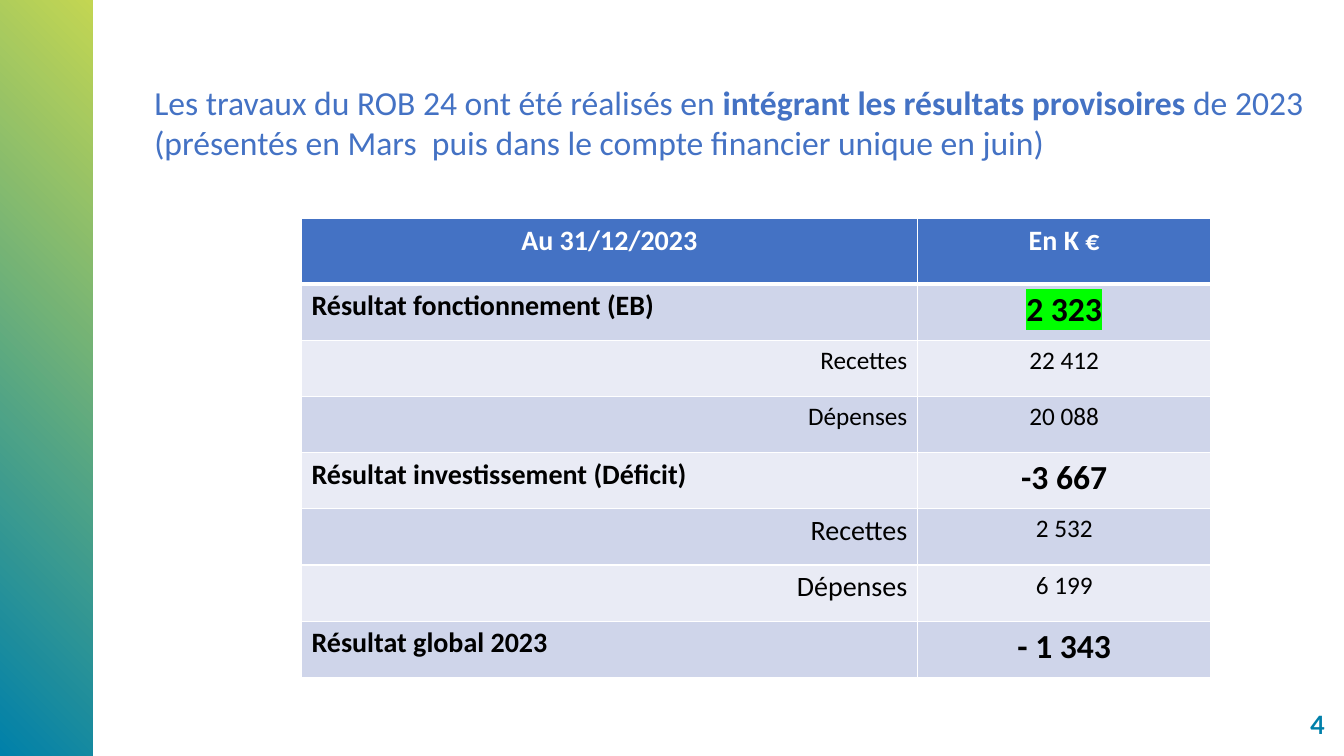
from dataclasses import dataclass

from lxml.etree import SubElement
from pptx import Presentation
from pptx.dml.color import RGBColor
from pptx.enum.shapes import MSO_SHAPE as Shape
from pptx.enum.text import MSO_ANCHOR as Anchor, MSO_AUTO_SIZE as AutoSize, PP_ALIGN as Align
from pptx.oxml.ns import qn
from pptx.util import Inches, Pt


@dataclass(frozen=True)
class Theme:
    blue: str = "4472C4"
    teal: str = "0080AA"
    lime: str = "C3D652"
    white: str = "FFFFFF"
    black: str = "000000"
    bands: tuple = ("CFD5EA", "E9EBF5")
    highlight: str = "00FF00"
    body_font: str = "Calibri"
    number_font: str = "Lato"
    large: int = 24
    medium: int = 20
    small: int = 18


THEME = Theme()
WIDTH, HEIGHT = Inches(13.33), Inches(7.5)
HEADINGS = ("Au 31/12/2023", "En K €")
# label, amount, is a result, label size, highlight of the amount
RESULTS = (
    ("Résultat fonctionnement (EB)", "2 323", True, THEME.medium, THEME.highlight),
    ("Recettes", "22 412", False, THEME.small, None),
    ("Dépenses", "20 088", False, THEME.small, None),
    ("Résultat investissement (Déficit)", "-3 667", True, THEME.medium, None),
    ("Recettes", "2 532", False, THEME.medium, None),
    ("Dépenses", "6 199", False, THEME.medium, None),
    ("Résultat global 2023", "- 1 343", True, THEME.medium, None),
)


def box(left, top, width, height):
    """Turn percentages of the slide's size into lengths."""
    return (int(WIDTH * left / 100), int(HEIGHT * top / 100),
            int(WIDTH * width / 100), int(HEIGHT * height / 100))


def rgb(color):
    return RGBColor.from_string(color)


def add_text(paragraph, text, size=THEME.large, color=THEME.black, bold=False,
             font=THEME.body_font, align=Align.LEFT, highlight=None):
    paragraph.alignment = align
    run = paragraph.add_run()
    run.text = text
    run.font.size = Pt(size)
    run.font.bold = bold
    run.font.name = font
    run.font.color.rgb = rgb(color)
    if highlight:
        properties = run.font._element
        mark = SubElement(properties, qn("a:highlight"))
        SubElement(mark, qn("a:srgbClr"), val=highlight)
        properties.find(qn("a:latin")).addprevious(mark)


def add_side_band(slide):
    band = slide.shapes.add_shape(Shape.RECTANGLE, *box(0, 0, 6.9, 100))
    band.shadow.inherit = False
    band.line.fill.background()
    band.fill.gradient()
    band.fill.gradient_angle = 45
    for stop, color in zip(band.fill.gradient_stops, (THEME.teal, THEME.lime)):
        stop.color.rgb = rgb(color)


def add_title(slide):
    title = slide.shapes.title
    title.left, title.top, title.width, title.height = box(10.73, 10.13, 87.55, 12.13)
    frame = title.text_frame
    frame.word_wrap = True
    frame.vertical_anchor = Anchor.TOP
    frame.auto_size = AutoSize.SHAPE_TO_FIT_TEXT
    for text, bold in (
        ("Les travaux du ROB 24 ont été réalisés en ", False),
        ("intégrant les résultats provisoires ", True),
        ("de 2023 (présentés en Mars  puis dans le compte financier unique en juin)", False),
    ):
        add_text(frame.paragraphs[0], text, color=THEME.blue, bold=bold)


def add_page_number(slide, number):
    frame = slide.shapes.add_textbox(*box(71.42, 93.07, 27.91, 5.47)).text_frame
    frame.word_wrap = True
    frame.vertical_anchor = Anchor.MIDDLE
    add_text(frame.paragraphs[0], number, size=THEME.small, color=THEME.teal,
             bold=True, font=THEME.number_font, align=Align.RIGHT)


def set_borders(cell, top=1, bottom=1):
    properties = cell._tc.get_or_add_tcPr()
    for index, (side, width) in enumerate((("L", 1), ("R", 1), ("T", top), ("B", bottom))):
        line = SubElement(properties, qn(f"a:ln{side}"), w=str(Pt(width)))
        fill = SubElement(line, qn("a:solidFill"))
        SubElement(fill, qn("a:srgbClr"), val=THEME.white)
        properties.insert(index, line)


def fill_cell(cell, text, fill, top=1, bottom=1, **text_format):
    cell.fill.solid()
    cell.fill.fore_color.rgb = rgb(fill)
    set_borders(cell, top, bottom)
    add_text(cell.text_frame.paragraphs[0], text, **text_format)


def add_results_table(slide):
    left, top, width, height = box(22.43, 28.93, 67.67, 60.67)
    table = slide.shapes.add_table(len(RESULTS) + 1, len(HEADINGS),
                                   left, top, width, height).table
    table.columns[0].width = Inches(6.11)
    table.columns[1].width = width - Inches(6.11)
    header_height = Inches(0.65)
    for index, row in enumerate(table.rows):
        row.height = (height - header_height) // len(RESULTS) if index else header_height

    for column, heading in enumerate(HEADINGS):
        fill_cell(table.cell(0, column), heading, THEME.blue, bottom=3, size=THEME.medium,
                  color=THEME.white, bold=True, align=Align.CENTER)
    for row, (label, amount, is_result, size, highlight) in enumerate(RESULTS, start=1):
        shared = dict(fill=THEME.bands[(row - 1) % 2], top=3 if row == 1 else 1, bold=is_result)
        fill_cell(table.cell(row, 0), label, size=size,
                  align=Align.LEFT if is_result else Align.RIGHT, **shared)
        fill_cell(table.cell(row, 1), amount, size=THEME.large if is_result else THEME.small,
                  align=Align.CENTER, highlight=highlight, **shared)


def main():
    presentation = Presentation()
    presentation.slide_width, presentation.slide_height = WIDTH, HEIGHT
    slide = presentation.slides.add_slide(presentation.slide_layouts[5])
    add_side_band(slide)
    add_page_number(slide, "4")
    add_title(slide)
    add_results_table(slide)
    presentation.save("out.pptx")


if __name__ == "__main__":
    main()
